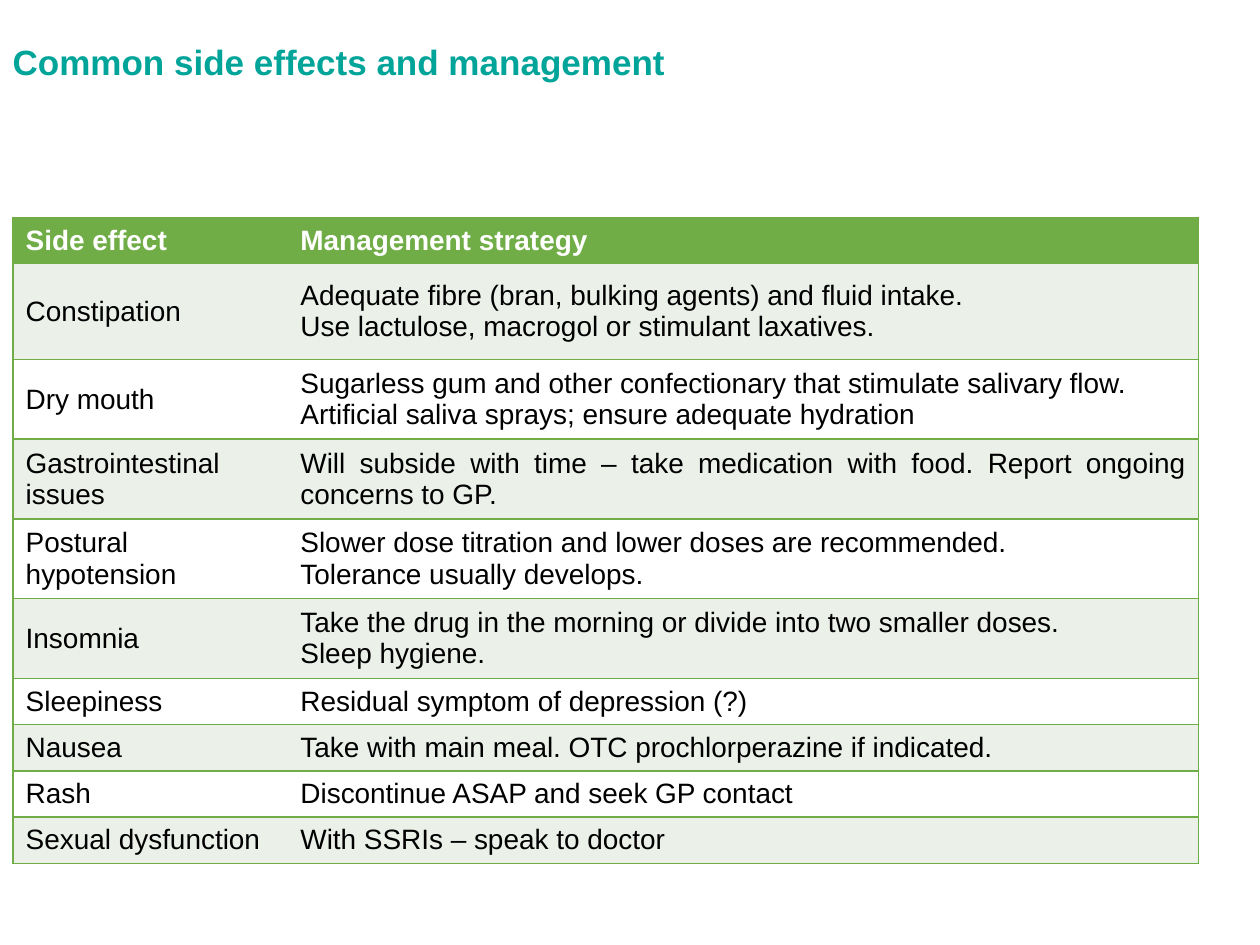
from dataclasses import dataclass

from lxml.etree import SubElement
from pptx import Presentation
from pptx.dml.color import RGBColor as RGB
from pptx.enum.text import MSO_ANCHOR as Anchor, MSO_AUTO_SIZE as Fit, PP_ALIGN as Align
from pptx.oxml.ns import qn
from pptx.util import Pt


@dataclass(frozen=True)
class Theme:
    font: str = "Arial"
    title_size: float = 20
    body_size: float = 16
    title: str = "00A499"
    green: str = "70AD47"
    band: str = "EBF1E9"
    white: str = "FFFFFF"
    black: str = "000000"
    border: float = 1


SIDE_EFFECTS = [
    ("Side effect", "Management strategy"),
    ("Constipation", "Adequate fibre (bran, bulking agents) and fluid intake.\n"
                     "Use lactulose, macrogol or stimulant laxatives."),
    ("Dry mouth", "Sugarless gum and other confectionary that stimulate salivary flow.\n"
                  "Artificial saliva sprays; ensure adequate hydration"),
    ("Gastrointestinal issues", "Will subside with time – take medication with food. "
                                "Report ongoing concerns to GP."),
    ("Postural hypotension", "Slower dose titration and lower doses are recommended.\n"
                             "Tolerance usually develops."),
    ("Insomnia", "Take the drug in the morning or divide into two smaller doses.\n"
                 "Sleep hygiene."),
    ("Sleepiness", "Residual symptom of depression (?)"),
    ("Nausea", "Take with main meal. OTC prochlorperazine if indicated."),
    ("Rash", "Discontinue ASAP and seek GP contact"),
    ("Sexual dysfunction", "With SSRIs – speak to doctor"),
]
ONE_LINE, TWO_LINES, TALL = 26.4, 45.6, 54.8
ROW_HEIGHTS = [ONE_LINE, TALL] + [TWO_LINES] * 4 + [ONE_LINE] * 4
COLUMN_WIDTHS = [157, 520.5]


class SlideBuilder:
    def __init__(self, slide, theme):
        self.s, self.theme = slide, theme

    def fill_text(self, tf, text, size, color, bold, align):
        """Fill a text frame, one paragraph per line of text."""
        tf.text = text
        for p in tf.paragraphs:
            p.alignment = align
            for r in p.runs:
                style = dict(name=self.theme.font, size=Pt(size), bold=bold)
                for key, value in style.items():
                    setattr(r.font, key, value)
                r.font.color.rgb = RGB.from_string(color)

    def title(self, text, left, top, width, height):
        t, sp = self.theme, self.s.shapes.title
        box = dict(left=left, top=top, width=width, height=height)
        for key, value in box.items():
            setattr(sp, key, Pt(value))
        tf = sp.text_frame
        frame = dict(word_wrap=True, auto_size=Fit.NONE, vertical_anchor=Anchor.TOP)
        for key, value in frame.items():
            setattr(tf, key, value)
        self.fill_text(tf, text, t.title_size, t.title, True, Align.LEFT)

    def borders(self, cell, sides):
        """Draw the named sides of a cell and clear the others."""
        tc_pr = cell._tc.get_or_add_tcPr()
        for i, side in enumerate("LRTB"):
            ln = SubElement(tc_pr, qn(f"a:ln{side}"), w=str(Pt(self.theme.border)))
            tc_pr.insert(i, ln)
            if side in sides:
                fill = SubElement(ln, qn("a:solidFill"))
                SubElement(fill, qn("a:srgbClr"), val=self.theme.green)
            else:
                SubElement(ln, qn("a:noFill"))

    def table(self, rows, left, top, widths, heights):
        t = self.theme
        tbl = self.s.shapes.add_table(len(rows), len(widths), Pt(left), Pt(top),
                                      Pt(sum(widths)), Pt(sum(heights))).table
        for col, width in zip(tbl.columns, widths):
            col.width = Pt(width)
        for i, (row, height) in enumerate(zip(rows, heights)):
            tbl.rows[i].height = Pt(height)
            header = i == 0
            fill = t.green if header else t.band if i % 2 else t.white
            color = t.white if header else t.black
            for j, text in enumerate(row):
                cell = tbl.cell(i, j)
                cell.vertical_anchor = Anchor.MIDDLE
                cell.fill.solid()
                cell.fill.fore_color.rgb = RGB.from_string(fill)
                self.fill_text(cell.text_frame, text, t.body_size, color, header, Align.JUSTIFY)
                self.borders(cell, "LTB" if j == 0 else "RTB")


def main():
    prs = Presentation()
    prs.slide_width, prs.slide_height = Pt(720), Pt(540)
    slide = SlideBuilder(prs.slides.add_slide(prs.slide_layouts[5]), Theme())

    # Heading
    slide.title("Common side effects and management", 0, 19.5, 644.5, 31.5)

    # Side effects and how to manage them
    slide.table(SIDE_EFFECTS, 7.5, 124.2, COLUMN_WIDTHS, ROW_HEIGHTS)

    prs.save("out.pptx")


if __name__ == "__main__":
    main()
